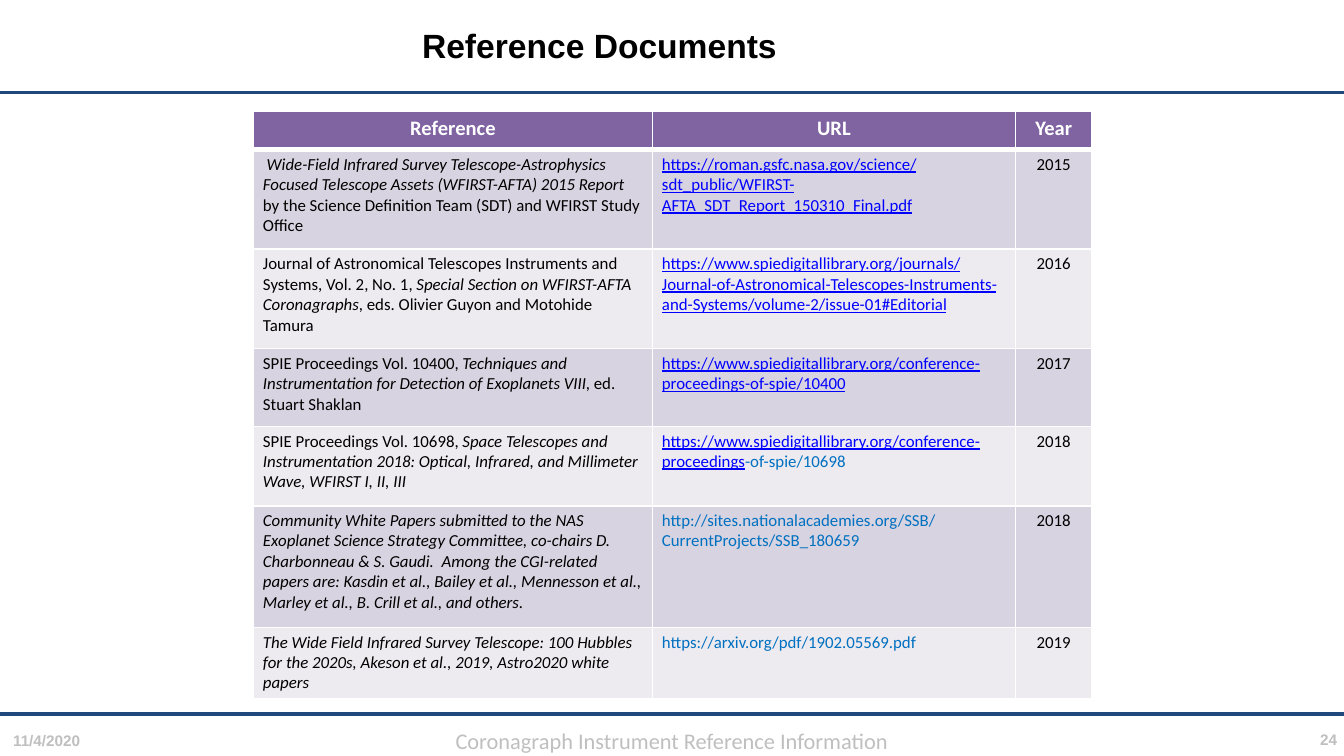
from pptx import Presentation, util as u
from pptx.dml.color import RGBColor
from pptx.enum import shapes, text
from pptx.oxml import ns
from lxml import etree

# Content
TITLE = "Reference Documents"
DATE, FOOTER, NUMBER = "11/4/2020", "Coronagraph Instrument Reference Information", "24"
HEADER = ["Reference", "URL", "Year"]
# Each row: reference runs, URL runs, year; a run is (text, style)
ROWS = [
    ([(" Wide-Field Infrared Survey Telescope-Astrophysics Focused Telescope Assets "
       "(WFIRST-AFTA) 2015 Report", "italic"),
      (" by the Science Definition Team (SDT) and WFIRST Study Office", "plain")],
     [("https://roman.gsfc.nasa.gov/science/sdt_public/"
       "WFIRST-AFTA_SDT_Report_150310_Final.pdf", "link")],
     "2015"),
    ([("Journal of Astronomical Telescopes Instruments and Systems, Vol. 2, No. 1, ", "plain"),
      ("Special Section on WFIRST-AFTA Coronagraphs", "italic"),
      (", eds. Olivier Guyon and Motohide Tamura", "plain")],
     [("https://www.spiedigitallibrary.org/journals/Journal-of-Astronomical-Telescopes-"
       "Instruments-and-Systems/volume-2/issue-01#Editorial", "link")],
     "2016"),
    ([("SPIE Proceedings Vol. 10400, ", "plain"),
      ("Techniques and Instrumentation for Detection of Exoplanets VIII", "italic"),
      (", ed. Stuart Shaklan", "plain")],
     [("https://www.spiedigitallibrary.org/conference-proceedings-of-spie/10400", "link")],
     "2017"),
    ([("SPIE Proceedings Vol. 10698, ", "plain"),
      ("Space Telescopes and Instrumentation 2018: Optical, Infrared, and Millimeter Wave, "
       "WFIRST I, II, III", "italic")],
     [("https://www.spiedigitallibrary.org/conference-proceedings", "link"),
      ("-of-spie/10698", "url")],
     "2018"),
    ([("Community White Papers submitted to the NAS Exoplanet Science Strategy Committee, "
       "co-chairs D. Charbonneau & S. Gaudi.  Among the CGI-related papers are: Kasdin et al., "
       "Bailey et al., Mennesson et al., Marley et al., B. Crill et al., and others.", "italic")],
     [("http://sites.nationalacademies.org/SSB/CurrentProjects/SSB_180659", "url")],
     "2018"),
    ([("The Wide Field Infrared Survey Telescope: 100 Hubbles for the 2020s, Akeson et al., "
       "2019, Astro2020 white papers", "italic")],
     [("https://arxiv.org/pdf/1902.05569.pdf", "url")],
     "2019"),
]

THEME = dict(
    head_font="Arial", body_font="Calibri",
    title_size=18, footer_size=12, small_size=8.2, head_size=11, body_size=9,
    black="000000", white="FFFFFF", grey="BFBFBF", rule="1F497D",
    head_fill="8064A2", bands=("D8D3E0", "EDEAF0"),
    link="0000FF", url="0070C0",
)
STYLES = {  # colour, italic, underline
    "plain": (THEME["black"], False, False),
    "italic": (THEME["black"], True, False),
    "link": (THEME["link"], False, True),
    "url": (THEME["url"], False, False),
}
LEFT, CENTER, RIGHT = text.PP_ALIGN.LEFT, text.PP_ALIGN.CENTER, text.PP_ALIGN.RIGHT

# Layout in cm
WIDTH, HEIGHT = 25.4, 14.29
RULES = (1.75, 13.49)
TABLE_LEFT, TABLE_TOP = 4.79, 2.1
COLS = (7.54, 6.86, 1.45)
ROW_HEIGHTS = (0.73, 1.88, 1.88, 1.47, 1.5, 2.3, 1.35)


def style_font(font, name, size, color, bold=False):
    font.name, font.size, font.bold = name, u.Pt(size), bold
    font.color.rgb = RGBColor.from_string(color)


def add_label(s, words, box, align, name, size, color, bold, inset=(0.25, 0.13),
              anchor=text.MSO_ANCHOR.TOP):
    tf = s.shapes.add_textbox(*map(u.Cm, box)).text_frame
    tf.word_wrap, tf.vertical_anchor = True, anchor
    tf.margin_left = tf.margin_right = u.Cm(inset[0])
    tf.margin_top = tf.margin_bottom = u.Cm(inset[1])
    p = tf.paragraphs[0]
    p.text, p.alignment = words, align
    style_font(p.font, name, size, color, bold)


def add_rule(s, y):
    line = s.shapes.add_connector(shapes.MSO_CONNECTOR.STRAIGHT,
                                  0, u.Cm(y), u.Cm(WIDTH), u.Cm(y))
    line.line.width = u.Pt(2)
    line.line.color.rgb = RGBColor.from_string(THEME["rule"])
    etree.SubElement(line._element.spPr, ns.qn("a:effectLst"))


def add_borders(cell, widths):
    """Draw white borders; widths are points for left, right, top, bottom."""
    tc_pr = cell._tc.get_or_add_tcPr()
    for i, (side, width) in enumerate(zip("LRTB", widths)):
        ln = etree.Element(ns.qn(f"a:ln{side}"), w=str(u.Pt(width)))
        fill = etree.SubElement(ln, ns.qn("a:solidFill"))
        etree.SubElement(fill, ns.qn("a:srgbClr"), val=THEME["white"])
        tc_pr.insert(i, ln)


def fill_cell(cell, runs, align, fill, widths):
    cell.margin_left = cell.margin_right = u.Cm(0.18)
    cell.margin_top = cell.margin_bottom = u.Cm(0.09)
    cell.fill.solid()
    cell.fill.fore_color.rgb = RGBColor.from_string(fill)
    add_borders(cell, widths)
    p = cell.text_frame.paragraphs[0]
    p.alignment = align
    for words, style in runs:
        r = p.add_run()
        r.text = words
        if style == "head":
            style_font(r.font, THEME["body_font"], THEME["head_size"], THEME["white"], True)
        else:
            color, r.font.italic, r.font.underline = STYLES[style]
            style_font(r.font, THEME["body_font"], THEME["body_size"], color)


def add_references(s):
    table = s.shapes.add_table(len(ROW_HEIGHTS), len(COLS), u.Cm(TABLE_LEFT), u.Cm(TABLE_TOP),
                               u.Cm(sum(COLS)), u.Cm(sum(ROW_HEIGHTS))).table
    for col, width in zip(table.columns, COLS):
        col.width = u.Cm(width)
    for row, height in zip(table.rows, ROW_HEIGHTS):
        row.height = u.Cm(height)
    for j, words in enumerate(HEADER):
        fill_cell(table.cell(0, j), [(words, "head")], CENTER, THEME["head_fill"], (1, 1, 1, 3))
    for i, (reference, url, year) in enumerate(ROWS, 1):
        cells = (reference, LEFT), (url, LEFT), ([(year, "plain")], CENTER)
        for j, (runs, align) in enumerate(cells):
            fill_cell(table.cell(i, j), runs, align, THEME["bands"][(i - 1) % 2],
                      (1, 1, 3 if i == 1 else 1, 1))


def main():
    prs = Presentation()
    prs.slide_width, prs.slide_height = u.Cm(WIDTH), u.Cm(HEIGHT)
    s = prs.slides.add_slide(prs.slide_layouts[6])

    # Footer and rules
    small = (THEME["head_font"], THEME["small_size"], THEME["grey"], True)
    add_label(s, NUMBER, (22.96, 13.72, 2.44, 0.48), RIGHT, *small, inset=(0.13, 0.08))
    add_label(s, DATE, (0, 13.69, 5.31, 0.61), LEFT, *small)
    for y in RULES:
        add_rule(s, y)
    add_label(s, FOOTER, (0, 13.61, WIDTH, 0.76), CENTER,
              THEME["body_font"], THEME["footer_size"], THEME["grey"], False)

    # Title
    add_label(s, TITLE, (3.81, 0.15, 15.04, 1.42), CENTER, THEME["head_font"],
              THEME["title_size"], THEME["black"], True, anchor=text.MSO_ANCHOR.MIDDLE)

    # Reference table
    add_references(s)
    prs.save("out.pptx")


if __name__ == "__main__":
    main()
